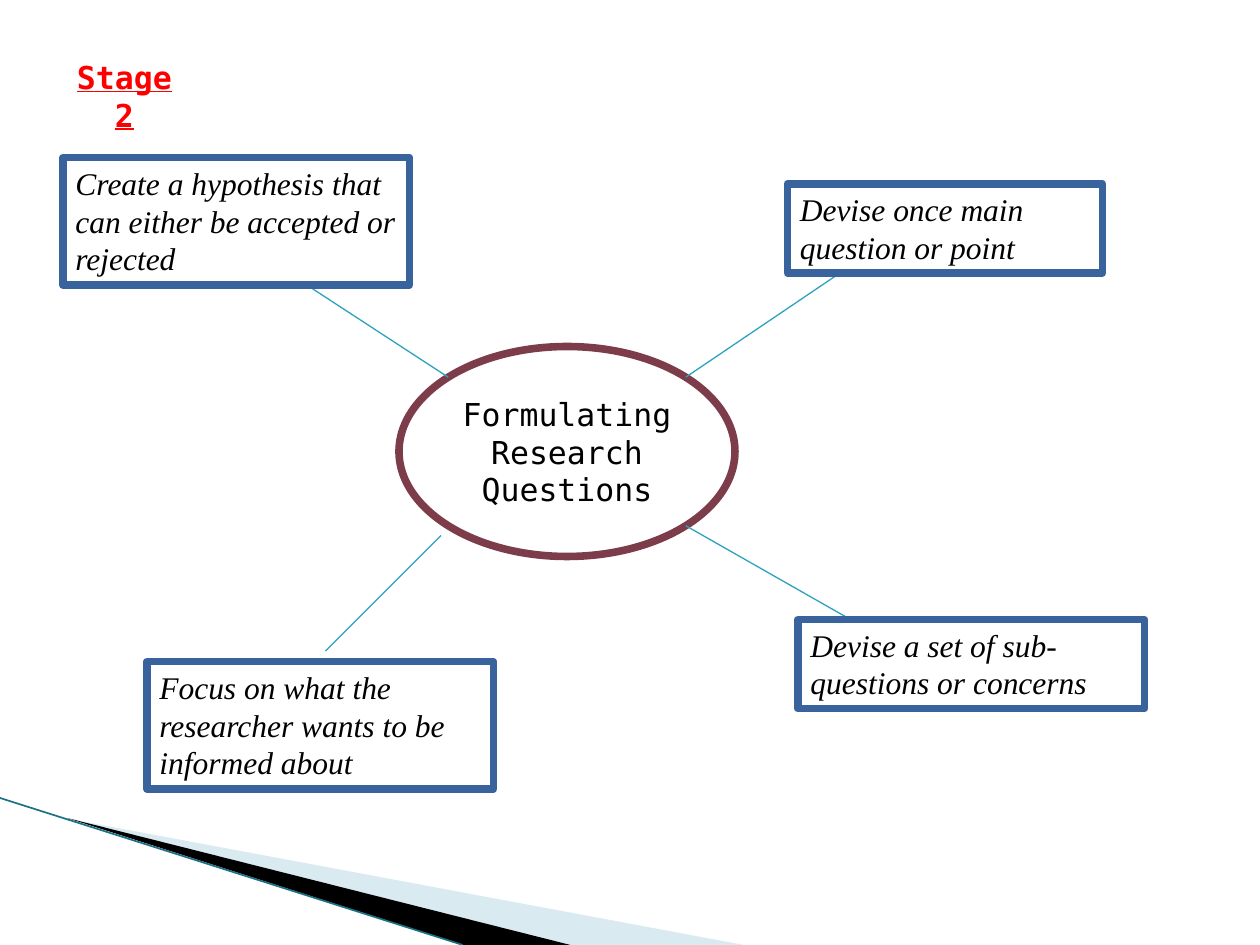
from math import sqrt

from lxml.etree import SubElement
from pptx import Presentation
from pptx.dml.color import RGBColor
from pptx.enum.shapes import MSO_CONNECTOR, MSO_SHAPE
from pptx.enum.text import MSO_ANCHOR, PP_ALIGN
from pptx.oxml.ns import qn
from pptx.util import Pt

THEME = {
    "text": "000000", "stage": "FF0000", "paper": "FFFFFF",
    "hub": "7D3C4A", "box": "39639D", "spoke": "2DA2BF",
    "light_wedge": "A0CBDC", "dark_wedge": "000000", "edge": "1A7186",
    "mono": "DejaVu Sans Mono", "serif": "Times New Roman",
    "size": 18, "outline": 4.33, "thin": 0.75, "edge_width": 0.95,
}

STAGE = ("Stage 2", (0, 24, 144, 66))
HUB = ("Formulating Research Questions", (228, 198, 192, 120))
# text, (left, top, width, height)
BOXES = [
    ("Devise once main question or point", (450, 105, 180, 51)),
    ("Devise a set of sub-questions or concerns", (456, 354, 198, 51)),
    ("Focus on what the researcher wants to be informed about", (84, 378, 198, 73)),
    ("Create a hypothesis that can either be accepted or rejected", (36, 90, 198, 73)),
]
# side of the hub (x, y), far end of the spoke
SPOKES = [
    ((1, -1), (480, 156)),
    ((-1, -1), (174, 162)),
    ((1, 1), (486, 354)),
]
LOOSE_SPOKE = ((252, 306), (186, 372))
# colour, opacity in percent, corners
WEDGES = [
    ("light_wedge", 40, [(39.5, 468), (425, 540), (326, 540)]),
    ("dark_wedge", 100, [(38.5, 467.5), (326, 540), (265, 540)]),
]
EDGE = ((0, 456), (264.5, 540))


def colour(name):
    return RGBColor.from_string(THEME[name])


def add_line(page, start, end, name, width):
    line = page.shapes.add_connector(
        MSO_CONNECTOR.STRAIGHT, *(Pt(value) for value in start + end))
    line.line.color.rgb = colour(name)
    line.line.width = Pt(width)
    SubElement(line._element.spPr, qn("a:effectLst"))


def add_wedge(page, name, opacity, corners):
    builder = page.shapes.build_freeform(
        *(Pt(value) for value in corners[0]), scale=1.0)
    builder.add_line_segments([(Pt(x), Pt(y)) for x, y in corners[1:]], close=True)
    wedge = builder.convert_to_shape()
    wedge.shadow.inherit = False
    wedge.fill.solid()
    wedge.fill.fore_color.rgb = colour(name)
    wedge.line.fill.background()
    if opacity < 100:
        tint = wedge._element.spPr.find(".//" + qn("a:srgbClr"))
        SubElement(tint, qn("a:alpha"), val=str(opacity * 1000))


def add_label(page, kind, text, place, outline, font, ink="text",
              align=PP_ALIGN.CENTER, anchor=MSO_ANCHOR.MIDDLE):
    """Add a shape holding one run; without an outline it is also unfilled."""
    shape = page.shapes.add_shape(kind, *(Pt(value) for value in place))
    shape.shadow.inherit = False
    if outline:
        shape.fill.solid()
        shape.fill.fore_color.rgb = colour("paper")
        shape.line.color.rgb = colour(outline)
        shape.line.width = Pt(THEME["outline"])
    else:
        shape.fill.background()
        shape.line.fill.background()
    frame = shape.text_frame
    frame.word_wrap = True
    frame.vertical_anchor = anchor
    para = frame.paragraphs[0]
    para.alignment = align
    span = para.add_run()
    span.text = text
    span.font.name = THEME[font]
    span.font.size = Pt(THEME["size"])
    span.font.color.rgb = colour(ink)
    return span


def main():
    deck = Presentation()
    deck.slide_width, deck.slide_height = Pt(720), Pt(540)
    page = deck.slides.add_slide(deck.slide_layouts[6])

    for wedge in WEDGES:
        add_wedge(page, *wedge)
    add_line(page, *EDGE, "edge", THEME["edge_width"])

    text, place = HUB
    add_label(page, MSO_SHAPE.FLOWCHART_CONNECTOR, text, place, "hub", "mono")
    left, top, width, height = place
    for (side_x, side_y), end in SPOKES:
        start = (left + width / 2 * (1 + side_x / sqrt(2)),
                 top + height / 2 * (1 + side_y / sqrt(2)))
        add_line(page, start, end, "spoke", THEME["thin"])
    add_line(page, *LOOSE_SPOKE, "spoke", THEME["thin"])

    for text, place in BOXES:
        span = add_label(page, MSO_SHAPE.RECTANGLE, text, place, "box", "serif",
                         align=PP_ALIGN.LEFT, anchor=MSO_ANCHOR.TOP)
        span.font.italic = True

    text, place = STAGE
    span = add_label(page, MSO_SHAPE.EXPLOSION1, text, place, None, "mono", "stage")
    span.font.bold = True
    span.font.underline = True

    deck.save("out.pptx")


if __name__ == "__main__":
    main()
